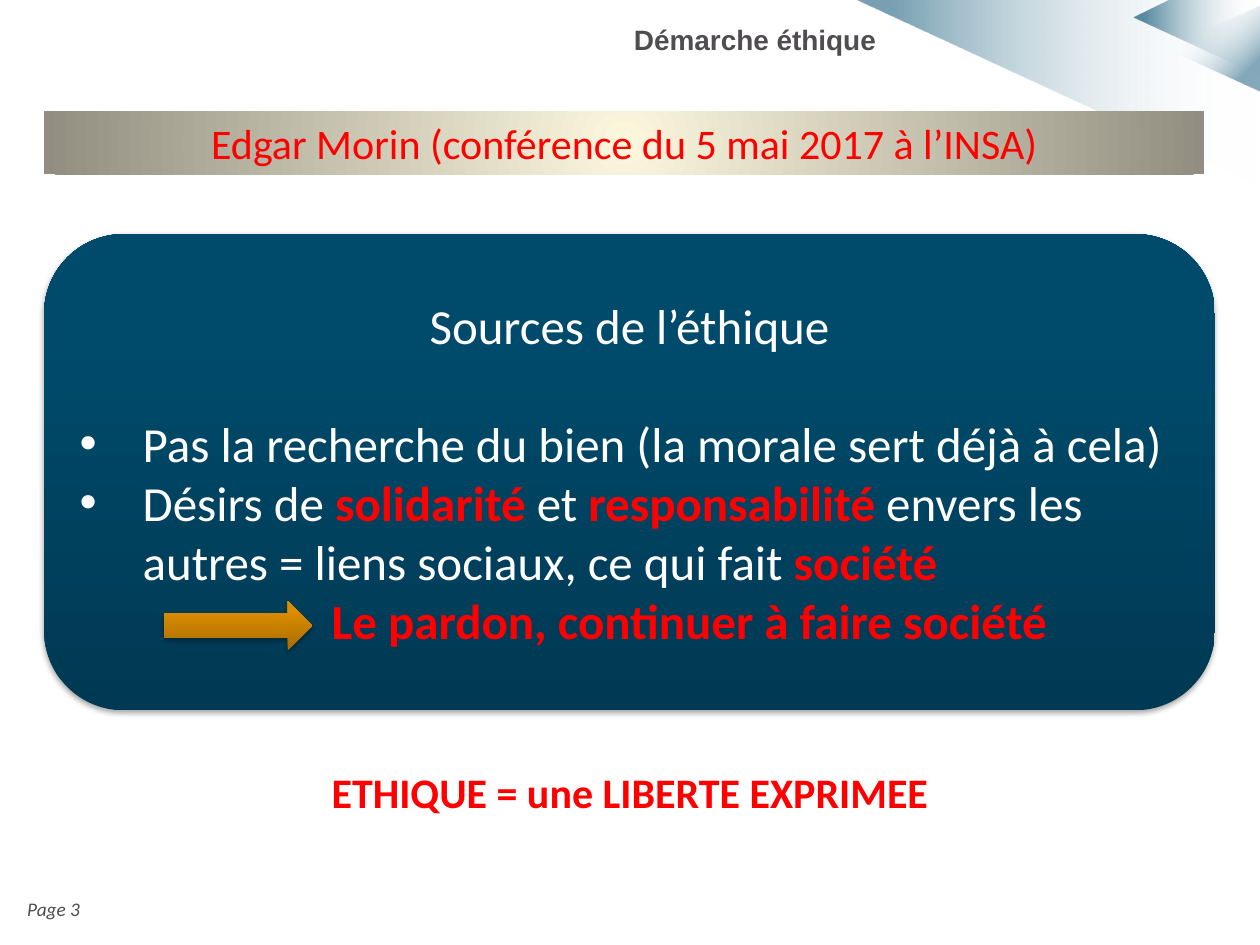
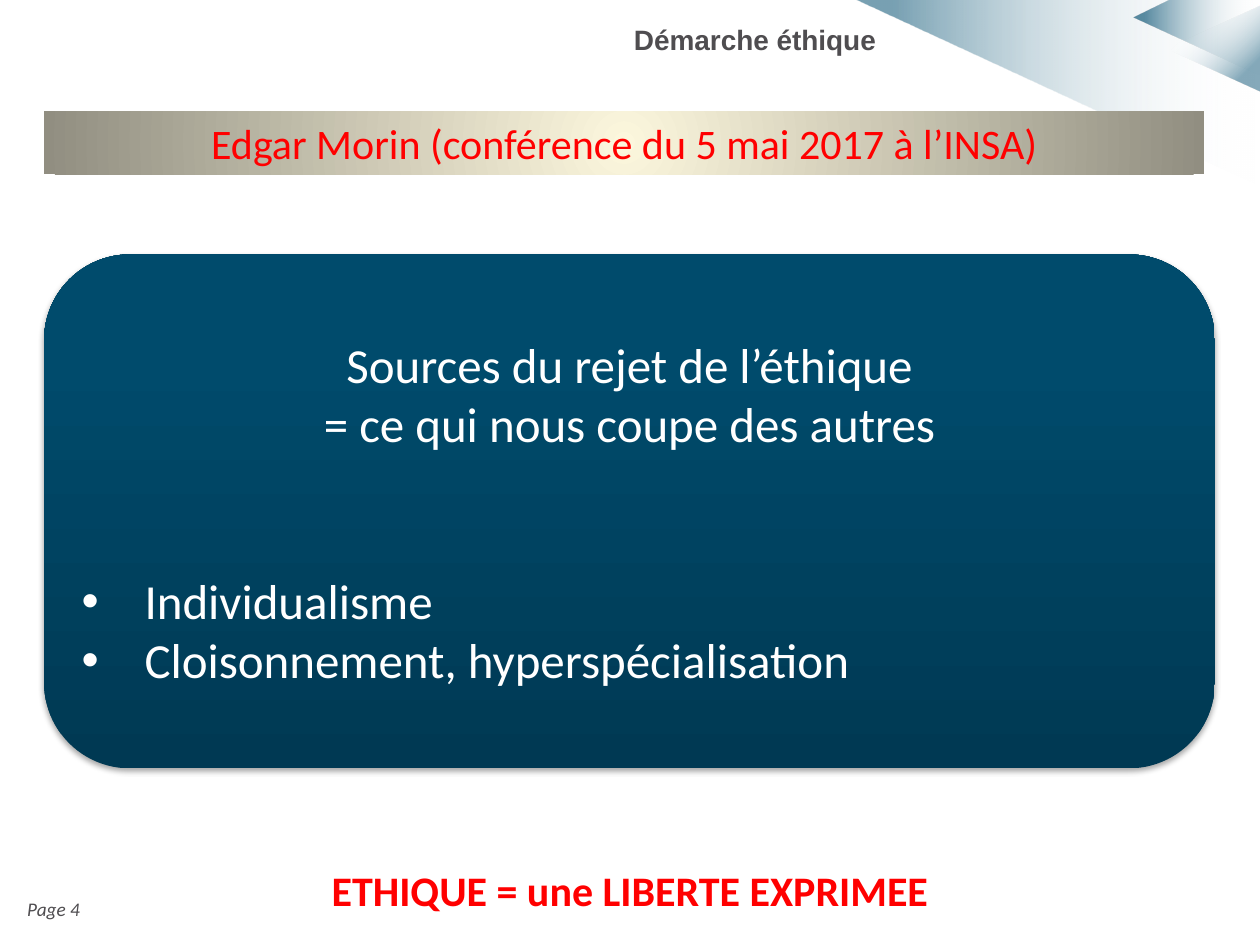
from typing import NamedTuple

from lxml.etree import SubElement
from pptx import Presentation
from pptx.dml.color import RGBColor
from pptx.enum.shapes import MSO_SHAPE as Preset
from pptx.enum.text import MSO_ANCHOR as Anchor, PP_ALIGN as Align
from pptx.oxml import parse_xml
from pptx.oxml.ns import nsdecls, qn
from pptx.shapes.base import BaseShape
from pptx.slide import Slide
from pptx.text.text import _Paragraph as Paragraph
from pptx.util import Cm, Pt

WHITE = RGBColor(0xFF, 0xFF, 0xFF)
RED = RGBColor(0xFF, 0x00, 0x00)
GREY = RGBColor(0x4F, 0x4D, 0x50)
CORNER_BLUE = RGBColor(0x00, 0x4D, 0x6F)
NAVY = RGBColor(0x00, 0x39, 0x53)
OCEAN = RGBColor(0x00, 0x4B, 0x6C)
CREAM = RGBColor(0xFC, 0xF7, 0xDD)
TAUPE = RGBColor(0x91, 0x8E, 0x81)
BRONZE = RGBColor(0xA9, 0x6C, 0x00)
AMBER = RGBColor(0xDB, 0x8C, 0x00)

WIDTH, HEIGHT = 25.4, 19.05
MARGIN = 0.89
PANEL_WIDTH = 23.6
BULLET_INDENT = 1.27
PANEL_SIZE = 28
BLANK_LINE = 34  # points taken by one line of panel text


class Frame(NamedTuple):
    """Left, top, width and height in centimetres."""
    left: float
    top: float
    width: float
    height: float


class Stop(NamedTuple):
    position: int
    color: RGBColor
    opacity: int = 100


class Style(NamedTuple):
    size: int
    color: RGBColor
    font: str = "Calibri"
    bold: bool = False
    italic: bool = False


class Span(NamedTuple):
    text: str
    strong: bool = False


class Line(NamedTuple):
    spans: list[Span]
    bullet: bool = False
    indent: float = 0
    gap: int = 0


class Content(NamedTuple):
    number: int
    panel_top: float
    panel_height: float
    lines: list[Line]
    conclusion_top: float
    arrow: Frame | None = None


HEADER = Style(16, GREY, "Arial", bold=True)
TITLE = Style(24, RED)
CONCLUSION = Style(24, RED, bold=True)
FOOTER = Style(11, GREY, italic=True)
PLAIN = Style(PANEL_SIZE, WHITE)
STRONG = Style(PANEL_SIZE, RED, bold=True)

PANEL_STOPS = [Stop(0, NAVY), Stop(80, OCEAN), Stop(100, OCEAN)]
ARROW_STOPS = [Stop(0, BRONZE), Stop(80, AMBER), Stop(100, AMBER)]
BAND_STOPS = [Stop(0, CREAM), Stop(100, TAUPE)]

# Outline points in centimetres and opacity of the blue edge
CORNER_OUTLINES = [
    ([(25.37, 3.73), (17.25, 0), (25.4, 0)], 53),
    ([(25.4, 1.52), (22.86, 0.36), (23.6, 0), (25.4, 0)], 63),
]

CONTENTS = [
    Content(3, 4.72, 9.6, [
        Line([Span("Sources de l’éthique")]),
        Line([Span("Pas la recherche du bien (la morale sert déjà à cela)")],
             bullet=True, gap=BLANK_LINE),
        Line([Span("Désirs de "), Span("solidarité ", True), Span("et "),
              Span("responsabilité", True),
              Span(" envers les autres = liens sociaux, ce qui fait "),
              Span("société", True)], bullet=True),
        Line([Span("Le pardon, continuer à faire société", True)], indent=5.08),
    ], 15.32, Frame(3.3, 12.12, 3, 0.99)),
    Content(4, 5.13, 10.36, [
        Line([Span("Sources du rejet de l’éthique")]),
        Line([Span("= ce qui nous coupe des autres")]),
        Line([Span("Individualisme")], bullet=True, gap=2 * BLANK_LINE),
        Line([Span("Cloisonnement, hyperspécialisation")], bullet=True),
    ], 17.3),
]


def place(shape: BaseShape, frame: Frame) -> None:
    shape.left, shape.top, shape.width, shape.height = map(Cm, frame)


def fill_gradient(shape: BaseShape, stops: list[Stop], angle: int | None = None) -> None:
    """Fill along a clockwise angle, or from the centre outwards without one."""
    stop_xml = "".join(
        f'<a:gs pos="{stop.position * 1000}"><a:srgbClr val="{stop.color}">'
        f'<a:alpha val="{stop.opacity * 1000}"/></a:srgbClr></a:gs>'
        for stop in stops)
    if angle is None:
        course = ('<a:path path="circle"><a:fillToRect l="50000" t="50000" '
                  'r="50000" b="50000"/></a:path>')
    else:
        course = f'<a:lin ang="{angle * 60000}" scaled="0"/>'
    gradient = parse_xml(f'<a:gradFill {nsdecls("a")} rotWithShape="1">'
                         f'<a:gsLst>{stop_xml}</a:gsLst>{course}</a:gradFill>')
    shape.fill.background()
    properties = shape._element.spPr
    properties.replace(properties.find(qn("a:noFill")), gradient)
    shape.line.fill.background()
    shape.shadow.inherit = False


def add_soft_shadow(shape: BaseShape) -> None:
    effects = shape._element.spPr.find(qn("a:effectLst"))
    effects.append(parse_xml(
        f'<a:outerShdw {nsdecls("a")} blurRad="{Pt(3.1)}" dist="{Pt(1.8)}" '
        'dir="5400000" rotWithShape="0"><a:srgbClr val="000000">'
        '<a:alpha val="35000"/></a:srgbClr></a:outerShdw>'))


def format_run(run, style: Style) -> None:
    font = run.font
    font.name, font.size = style.font, Pt(style.size)
    font.bold, font.italic = style.bold, style.italic
    font.color.rgb = style.color


def write(shape: BaseShape, text: str, style: Style, align: Align) -> None:
    frame = shape.text_frame
    frame.word_wrap = True
    frame.text = text
    para = frame.paragraphs[0]
    para.alignment = align
    format_run(para.runs[0], style)


def add_label(page: Slide, frame: Frame, text: str, style: Style, align: Align) -> None:
    write(page.shapes.add_textbox(*map(Cm, frame)), text, style, align)


def add_corner(page: Slide) -> None:
    for outline, opacity in CORNER_OUTLINES:
        start, *rest = [(Cm(x), Cm(y)) for x, y in outline]
        builder = page.shapes.build_freeform(*start)
        builder.add_line_segments(rest, close=True)
        fill_gradient(builder.convert_to_shape(),
                      [Stop(9, CORNER_BLUE, opacity), Stop(99, WHITE, 0)], 0)
    triangle = page.shapes.add_shape(Preset.ISOSCELES_TRIANGLE,
                                     Cm(23.6), Cm(0.03), Cm(1.73), Cm(1.9))
    triangle.rotation = 270
    fill_gradient(triangle, [Stop(27, WHITE, 0), Stop(81, CORNER_BLUE, 48)], 135)


def add_title_band(page: Slide) -> None:
    title = page.shapes.title
    place(title, Frame(MARGIN, 2.24, 23.39, 1.27))
    fill_gradient(title, BAND_STOPS)
    write(title, "Edgar Morin (conférence du 5 mai 2017 à l’INSA)", TITLE, Align.CENTER)
    title.text_frame.vertical_anchor = Anchor.MIDDLE
    page.shapes._spTree.append(title._element)  # in front of the corner


def write_line(para: Paragraph, line: Line) -> None:
    left_aligned = line.bullet or line.indent
    para.alignment = Align.LEFT if left_aligned else Align.CENTER
    if line.gap:
        para.space_before = Pt(line.gap)
    properties = para._p.get_or_add_pPr()
    if line.bullet:
        properties.set("marL", str(Cm(BULLET_INDENT)))
        properties.set("indent", str(-Cm(BULLET_INDENT)))
        SubElement(properties, qn("a:buFont"), typeface="Arial")
        SubElement(properties, qn("a:buChar"), char="•")
    elif line.indent:
        properties.set("marL", str(Cm(line.indent)))
    for span in line.spans:
        run = para.add_run()
        run.text = span.text
        format_run(run, STRONG if span.strong else PLAIN)


def add_panel(page: Slide, content: Content) -> None:
    panel = page.shapes.add_shape(
        Preset.ROUNDED_RECTANGLE, Cm(MARGIN), Cm(content.panel_top),
        Cm(PANEL_WIDTH), Cm(content.panel_height))
    fill_gradient(panel, PANEL_STOPS, 270)
    add_soft_shadow(panel)
    frame = panel.text_frame
    frame.word_wrap = True
    frame.vertical_anchor = Anchor.MIDDLE
    for index, line in enumerate(content.lines):
        write_line(frame.add_paragraph() if index else frame.paragraphs[0], line)


def add_arrow(page: Slide, frame: Frame) -> None:
    arrow = page.shapes.add_shape(Preset.RIGHT_ARROW, *map(Cm, frame))
    fill_gradient(arrow, ARROW_STOPS, 270)
    add_soft_shadow(arrow)


def add_page(deck, content: Content) -> None:
    page = deck.slides.add_slide(deck.slide_layouts.get_by_name("Title Only"))
    add_corner(page)
    add_label(page, Frame(0.3, 17.96, 6.81, 0.74), f"Page {content.number}",
              FOOTER, Align.LEFT)
    add_panel(page, content)
    add_title_band(page)
    if content.arrow:
        add_arrow(page, content.arrow)
    add_label(page, Frame(0, content.conclusion_top, WIDTH, 1.27),
              "ETHIQUE = une LIBERTE EXPRIMEE", CONCLUSION, Align.CENTER)
    add_label(page, Frame(5.11, 0.33, 12.8, 1.17), "Démarche éthique",
              HEADER, Align.RIGHT)


def main() -> None:
    deck = Presentation()
    deck.slide_width, deck.slide_height = Cm(WIDTH), Cm(HEIGHT)
    for content in CONTENTS:
        add_page(deck, content)
    deck.save("out.pptx")


if __name__ == "__main__":
    main()
